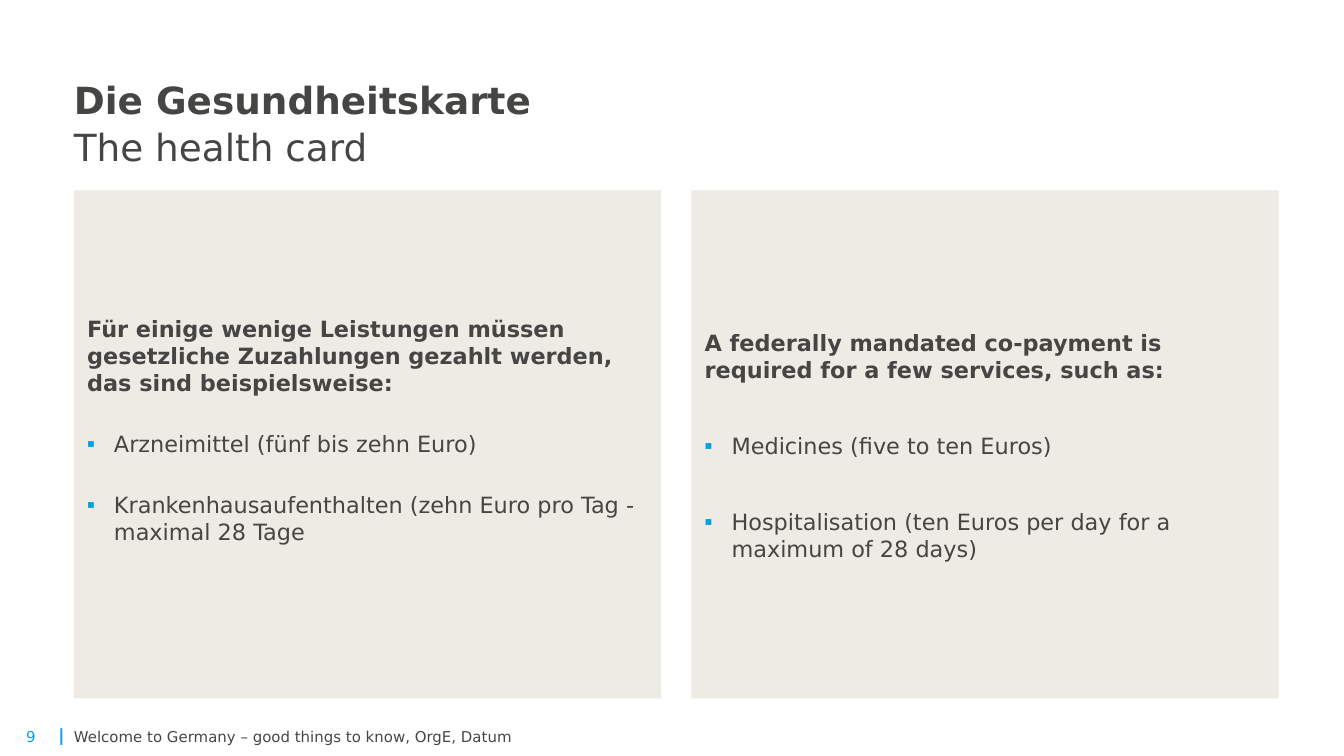
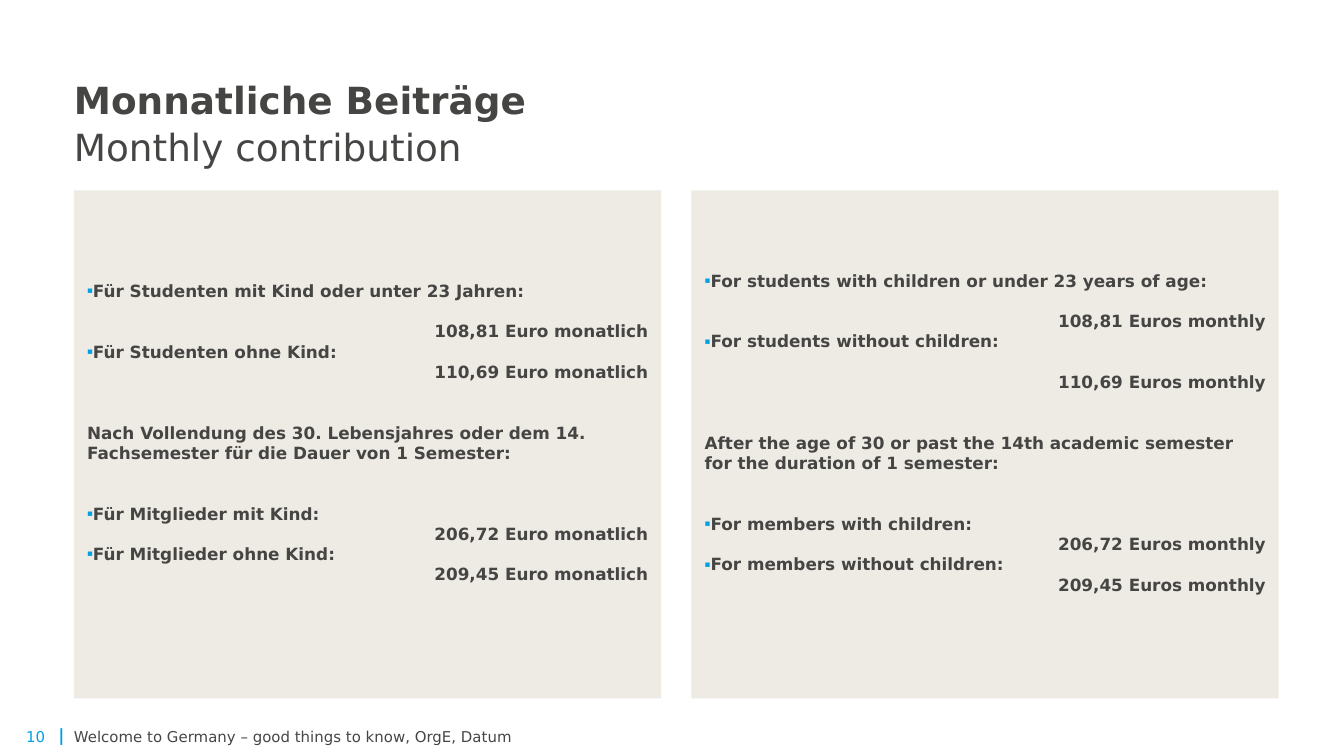
from lxml.etree import SubElement
from pptx import Presentation
from pptx.dml.color import RGBColor
from pptx.enum.shapes import MSO_SHAPE
from pptx.enum.text import MSO_ANCHOR, PP_ALIGN
from pptx.oxml.ns import qn
from pptx.util import Inches, Pt

HUES = {"ink": "454543", "blue": "00A0E3", "sand": "EEEBE5"}
FACE = "DejaVu Sans"
WIDE = Inches(10)
HIGH = WIDE * 9 // 16

# Boxes are left, top, width, height in percent of the slide
HEAD = (5.5, 7.9, 80.3, 14.4)
BODY = (5.5, 25.2, 89.65, 67.2)
FOOT = (1.95, 95.9, 93.35, 2.7)
GAP = 2.25  # between the two panels
LINE = 10.9  # height in points of one 9 pt line

TEXT = {"size": Pt(12), "bold": False}
LEAD = {"size": Pt(12), "bold": True}
RATE = {"size": Pt(9), "bold": True}
NOTE = {"size": Pt(8), "bold": False}
MARK = {"size": Pt(9), "bold": True}


def place(box):
    left, top, wide, high = box
    return [round(part * size / 100) for part, size in
            ((left, WIDE), (top, HIGH), (wide, WIDE), (high, HIGH))]


def apply(item, style):
    for key, value in style.items():
        setattr(item, key, value)


def write(para, words, style, hue="ink"):
    run = para.add_run()
    run.text = words
    apply(run.font, {"name": FACE, **style})
    run.font.color.rgb = RGBColor.from_string(HUES[hue])


def bullet(para, left):
    props = para._p.get_or_add_pPr()
    props.set("marL", str(Inches(left)))
    props.set("indent", str(Inches(-0.2)))
    tint = SubElement(props, qn("a:buClr"))
    SubElement(tint, qn("a:srgbClr")).set("val", HUES["blue"])
    for tag, key, value in (("a:buSzPct", "val", "52000"),
                            ("a:buFont", "typeface", FACE),
                            ("a:buChar", "char", "▪")):
        SubElement(props, qn(tag)).set(key, value)


def label(slide, box, wrap=True):
    frame = slide.shapes.add_textbox(*place(box)).text_frame
    apply(frame, {"margin_left": 0, "margin_top": 0, "margin_right": 0,
                  "margin_bottom": 0, "word_wrap": wrap,
                  "vertical_anchor": MSO_ANCHOR.BOTTOM})
    return frame.paragraphs[0]


# Title in two languages
def title(slide, box, first, second):
    para = label(slide, box)
    para.line_spacing = Pt(25)
    write(para, first, {"size": Pt(20), "bold": True})
    para.add_line_break()
    write(para, second, {"size": Pt(20), "bold": False})


# Page number, bar and footer text
def footer(slide, box, page):
    left, top, wide, high = box
    parts = ((0, 2.4, str(page), NOTE, "blue"),
             (2.4, 0.6, "|", MARK, "blue"),
             (3.55, wide - 3.55,
              "Welcome to Germany – good things to know, OrgE, Datum",
              NOTE, "ink"))
    for shift, span, words, style, hue in parts:
        para = label(slide, (left + shift, top, span, high), hue == "ink")
        write(para, words, style, hue)


# Sand panel, with text centred between its insets
def panel(slide, box, top, bottom):
    shape = slide.shapes.add_shape(MSO_SHAPE.RECTANGLE, *place(box))
    shape.shadow.inherit = False
    shape.fill.solid()
    shape.fill.fore_color.rgb = RGBColor.from_string(HUES["sand"])
    shape.line.fill.background()
    frame = shape.text_frame
    apply(frame, {"margin_left": Inches(0.1), "margin_right": Inches(0.1),
                  "margin_top": Inches(top), "margin_bottom": Inches(bottom),
                  "word_wrap": True, "vertical_anchor": MSO_ANCHOR.MIDDLE})
    return frame


def paras(frame, count):
    return [frame.paragraphs[0]] + [frame.add_paragraph()
                                    for _ in range(count - 1)]


# Bold lead followed by bullets
def listing(slide, box, top, bottom, space, lines):
    frame = panel(slide, box, top, bottom)
    for num, (para, words) in enumerate(zip(paras(frame, len(lines)), lines)):
        para.alignment = PP_ALIGN.LEFT
        if num:
            para.space_before = Pt(space)
            bullet(para, 0.2)
        write(para, words, TEXT if num else LEAD)


# Groups of members with their rates; gaps count lines
def rates(slide, box, unit, rows):
    frame = panel(slide, box, 0.05, 0.23)
    for para, (kind, gap, words) in zip(paras(frame, len(rows)), rows):
        is_rate = kind == "rate"
        para.alignment = PP_ALIGN.RIGHT if is_rate else PP_ALIGN.LEFT
        if gap:
            para.space_before = Pt(gap * LINE)
        if kind == "group":
            bullet(para, 0)
        write(para, f"{words} {unit}" if is_rate else words, RATE)


def page(deck, num, heads, draw, sides):
    slide = deck.slides.add_slide(deck.slide_layouts[6])
    title(slide, HEAD, *heads)
    left, top, wide, high = BODY
    span = (wide - GAP) / 2
    for col, side in enumerate(sides):
        draw(slide, (left + col * (span + GAP), top, span, high), *side)
    footer(slide, FOOT, num)


def plan(young, none, gap, later, kids, free):
    return (("group", 0, young), ("rate", 1, "108,81"),
            ("group", 0, none), ("rate", gap, "110,69"),
            ("lead", 2, later),
            ("group", 2, kids), ("rate", 0, "206,72"),
            ("group", 0, free), ("rate", 0, "209,45"))


CARD = (
    (0.05, 0.26, 18.4, (
        "Für einige wenige Leistungen müssen gesetzliche Zuzahlungen "
        "gezahlt werden, das sind beispielsweise:",
        "Arzneimittel (fünf bis zehn Euro)",
        "Krankenhausaufenthalten (zehn Euro pro Tag - maximal 28 Tage")),
    (0.08, 0.06, 26.4, (
        "A federally mandated co-payment is required for a few services, "
        "such as:",
        "Medicines (five to ten Euros)",
        "Hospitalisation (ten Euros per day for a maximum of 28 days)")),
)
FEES = (
    ("Euro monatlich", plan(
        "Für Studenten mit Kind oder unter 23 Jahren:",
        "Für Studenten ohne Kind:", 1,
        "Nach Vollendung des 30. Lebensjahres oder dem 14. Fachsemester "
        "für die Dauer von 1 Semester:",
        "Für Mitglieder mit Kind:", "Für Mitglieder ohne Kind:")),
    ("Euros monthly", plan(
        "For students with children or under 23 years of age:",
        "For students without children:", 1,
        "After the age of 30 or past the 14th academic semester "
        "for the duration of 1 semester:",
        "For members with children:", "For members without children:")),
)
# The German rate without children follows its group directly
FEES = ((FEES[0][0], tuple((kind, 0 if words == "110,69" else gap, words)
                           for kind, gap, words in FEES[0][1])), FEES[1])


def main():
    deck = Presentation()
    apply(deck, {"slide_width": WIDE, "slide_height": HIGH})
    page(deck, 9, ("Die Gesundheitskarte", "The health card"), listing, CARD)
    page(deck, 10, ("Monnatliche Beiträge", "Monthly contribution"),
         rates, FEES)
    deck.save("out.pptx")


if __name__ == "__main__":
    main()
